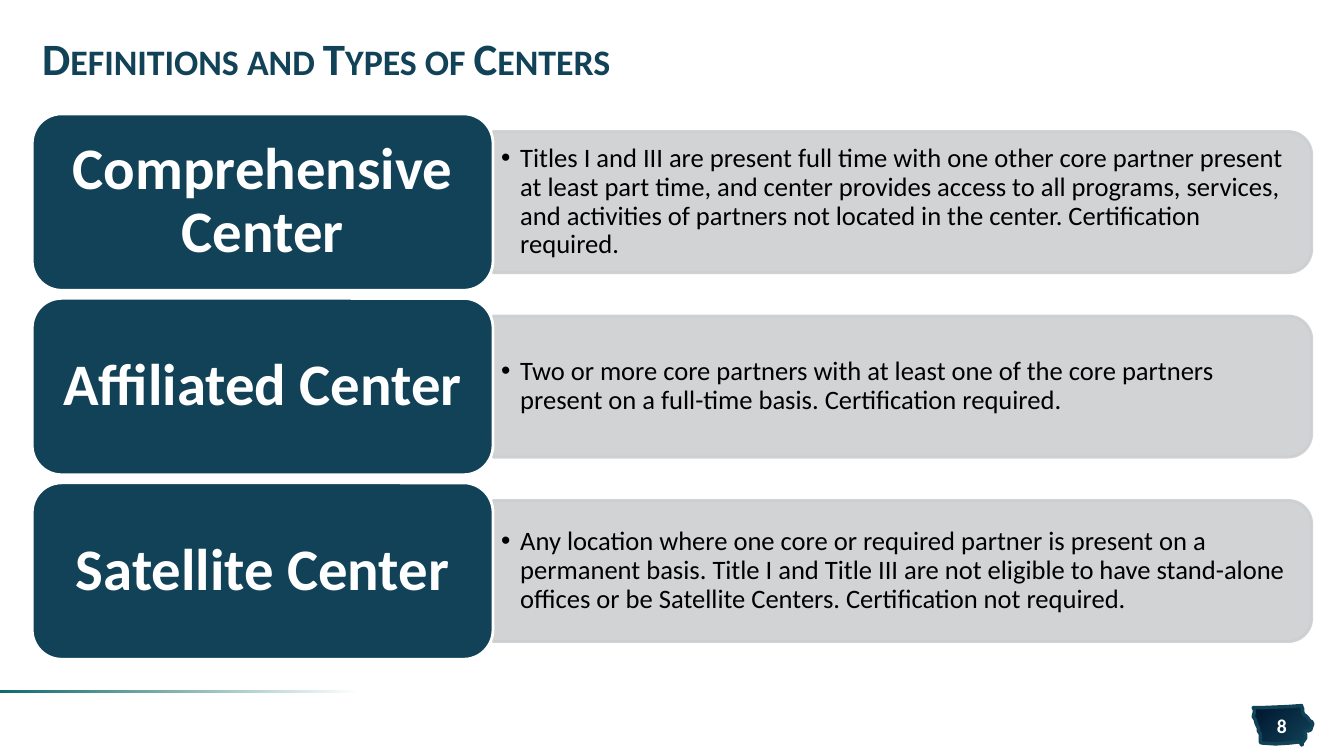
from dataclasses import dataclass

from lxml.etree import SubElement
from pptx import Presentation
from pptx.dml.color import RGBColor
from pptx.enum.shapes import MSO_SHAPE
from pptx.enum.text import MSO_ANCHOR, PP_ALIGN
from pptx.oxml.ns import qn
from pptx.shapes.autoshape import Shape
from pptx.slide import Slide
from pptx.text.text import TextFrame
from pptx.util import Inches, Pt

NAVY, TEAL, GREY, WHITE = "114257", "0F6A6B", "CCCFD1", "FFFFFF"
TOP, STEP, LEFT, WIDE, HIGH = 1.13, 1.83, 0.32, 4.57, 1.75
BAR_LEFT, BAR_WIDE, BAR_LONG = 8.25, 1.4, 8.12
TEXT_WIDE, TEXT_HIGH = 8.06, 1.26

STATE = [
    (1291, 700), (1277, 701), (1253, 702), (1243, 702), (1244, 704),
    (1244, 707), (1243, 711), (1245, 714), (1246, 718), (1248, 722),
    (1248, 725), (1250, 728), (1250, 732), (1250, 736), (1251, 737),
    (1265, 737.5), (1280, 737), (1288, 736), (1290, 737), (1291, 739),
    (1292, 738), (1291, 737), (1293, 735), (1295, 732), (1295, 729),
    (1294, 727), (1295, 725), (1298, 725), (1300, 724), (1301, 721),
    (1302, 718), (1301, 716), (1299, 715), (1297, 712), (1295, 710),
    (1293, 709), (1292, 706), (1292, 703), (1291, 701),
]


@dataclass
class Center:
    name: str
    terms: str


@dataclass
class Style:
    font: dict
    ink: str
    form: dict
    pads: tuple[float, float]


HEAD = Style({"size": Pt(32), "bold": True}, NAVY, {"line_spacing": 0.85}, (0.1, 0.05))
NAME = Style({"size": Pt(42), "bold": True}, WHITE,
             {"line_spacing": 0.9, "alignment": PP_ALIGN.CENTER}, (0.17, 0.09))
TERMS = Style({"size": Pt(19), "bold": False}, "000000",
              {"line_spacing": 0.9, "alignment": PP_ALIGN.LEFT}, (0.08, 0.04))
PAGE = Style({"size": Pt(14), "bold": True}, WHITE,
             {"alignment": PP_ALIGN.CENTER}, (0, 0.05))

CENTERS = [
    Center("Comprehensive Center",
           "Titles I and III are present full time with one other core partner "
           "present at least part time, and center provides access to all programs, "
           "services, and activities of partners not located in the "
           "center. Certification required."),
    Center("Affiliated Center",
           "Two or more core partners with at least one of the core partners "
           "present on a full-time basis. Certification required."),
    Center("Satellite Center",
           "Any location where one core or required partner is present on a "
           "permanent basis. Title I and Title III are not eligible to have "
           "stand-alone offices or be Satellite Centers. Certification not required."),
]


def tint(code: str) -> RGBColor:
    return RGBColor.from_string(code)


def paint(shape: Shape, fill: str, line: str) -> None:
    shape.shadow.inherit = False
    shape.fill.solid()
    shape.fill.fore_color.rgb = tint(fill)
    shape.line.color.rgb = tint(line)
    shape.line.width = Pt(2)


def blend(shape: Shape, angle: float, stops: list[tuple[float, str]]) -> None:
    shape.shadow.inherit = False
    shape.fill.gradient()
    shape.fill.gradient_angle = angle
    for stop, (place, code) in zip(shape.fill.gradient_stops, stops):
        stop.position = place
        stop.color.rgb = tint(code)


def write(frame: TextFrame, words: str, style: Style,
          bullet: bool = False, extra: dict | None = None) -> None:
    side, edge = map(Inches, style.pads)
    frame_form = {
        "word_wrap": True, "vertical_anchor": MSO_ANCHOR.MIDDLE,
        "margin_left": side, "margin_right": side,
        "margin_top": edge, "margin_bottom": edge,
    }
    for key, value in frame_form.items():
        setattr(frame, key, value)
    para = frame.paragraphs[0]
    if bullet:
        props = para._p.get_or_add_pPr()
        props.set("marL", str(Inches(0.19)))
        props.set("indent", str(Inches(-0.19)))
        SubElement(props, qn("a:buFont")).set("typeface", "Arial")
        SubElement(props, qn("a:buChar")).set("char", "•")
    for key, value in style.form.items():
        setattr(para, key, value)
    run = para.add_run()
    run.text = words
    for key, value in {"name": "Calibri", **style.font}.items():
        setattr(run.font, key, value)
    run.font.color.rgb = tint(style.ink)
    for key, value in (extra or {}).items():
        run._r.get_or_add_rPr().set(key, value)


def add_text(slide: Slide, box: tuple[float, float, float, float], words: str,
             style: Style, bullet: bool = False, extra: dict | None = None) -> None:
    text = slide.shapes.add_textbox(*map(Inches, box))
    write(text.text_frame, words, style, bullet, extra)


def add_state(slide: Slide) -> None:
    pen = slide.shapes.build_freeform(*STATE[0], scale=Inches(0.01))
    pen.add_line_segments(STATE[1:], close=True)
    state = pen.convert_to_shape()
    blend(state, 315, [(0, "00162E"), (1, NAVY)])
    state.line.color.rgb = tint(NAVY)
    state.line.width = Pt(2.5)


def add_rule(slide: Slide) -> None:
    rule = slide.shapes.add_shape(
        MSO_SHAPE.RECTANGLE, *map(Inches, (0, 6.85, 3.8, 0.03)))
    blend(rule, 180, [(0.06, WHITE), (1, TEAL)])
    rule.line.fill.background()


def add_center(slide: Slide, top: float, center: Center) -> None:
    mid = top + HIGH / 2
    bar = slide.shapes.add_shape(
        MSO_SHAPE.ROUND_2_SAME_RECTANGLE,
        *map(Inches, (BAR_LEFT, mid - BAR_LONG / 2, BAR_WIDE, BAR_LONG)))
    bar.rotation = 90
    paint(bar, GREY, GREY)
    for color in bar.element.iter(qn("a:srgbClr")):
        SubElement(color, qn("a:alpha")).set("val", "90000")
    add_text(slide, (LEFT + WIDE, mid - TEXT_HIGH / 2, TEXT_WIDE, TEXT_HIGH),
             center.terms, TERMS, bullet=True)
    card = slide.shapes.add_shape(
        MSO_SHAPE.ROUNDED_RECTANGLE, *map(Inches, (LEFT, top, WIDE, HIGH)))
    paint(card, NAVY, WHITE)
    write(card.text_frame, center.name, NAME)


def main() -> None:
    deck = Presentation()
    deck.slide_width, deck.slide_height = Inches(13.33), Inches(7.5)
    slide = deck.slides.add_slide(deck.slide_layouts[6])
    add_state(slide)
    add_rule(slide)
    add_text(slide, (12.46, 7.08, 0.51, 0.23), "8", PAGE, extra={"spc": "50"})
    add_text(slide, (0.32, 0.24, 12.69, 0.75),
             "Definitions and Types of Centers", HEAD, extra={"cap": "small"})
    for row, center in enumerate(CENTERS):
        add_center(slide, TOP + row * STEP, center)
    deck.save("out.pptx")


if __name__ == "__main__":
    main()
